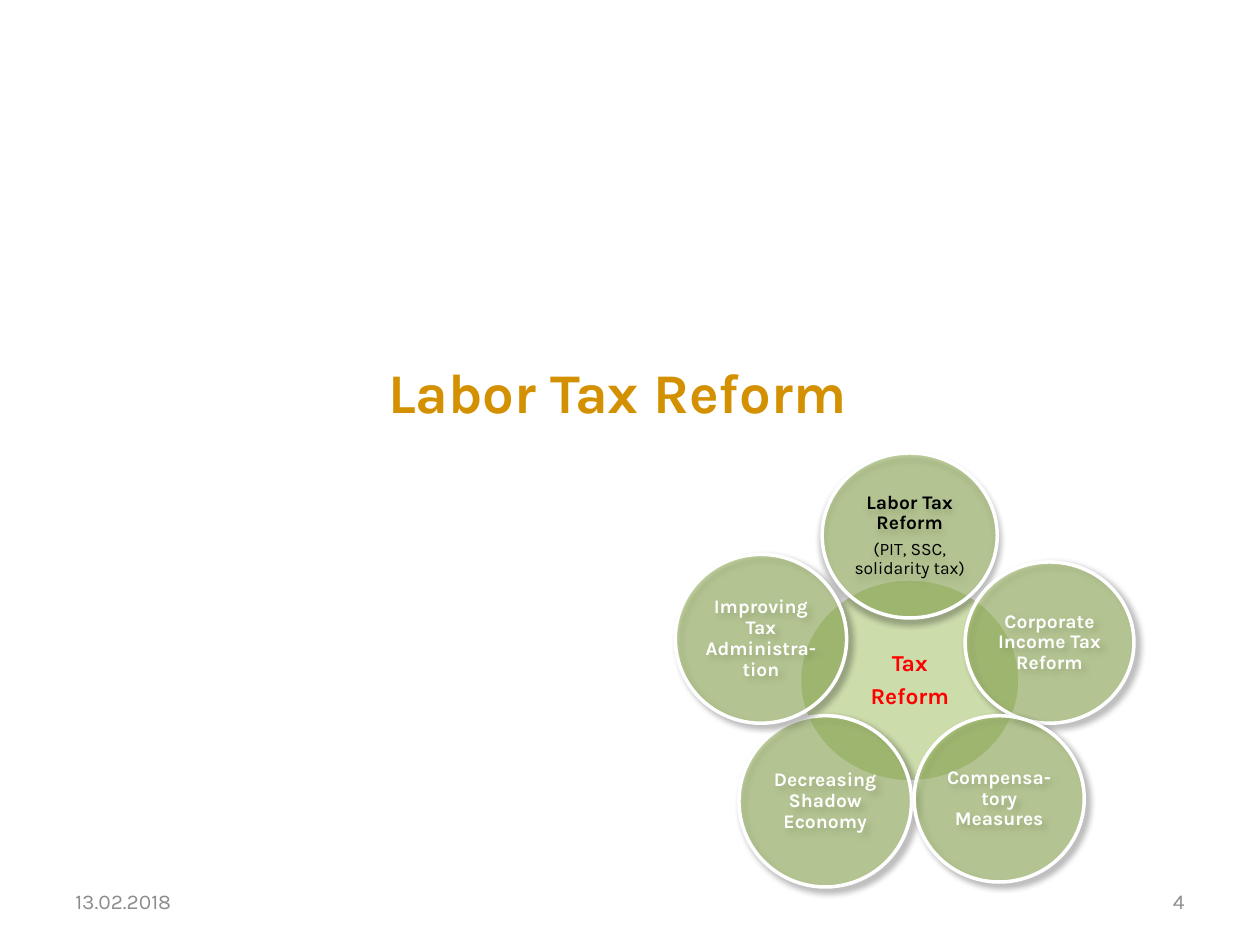
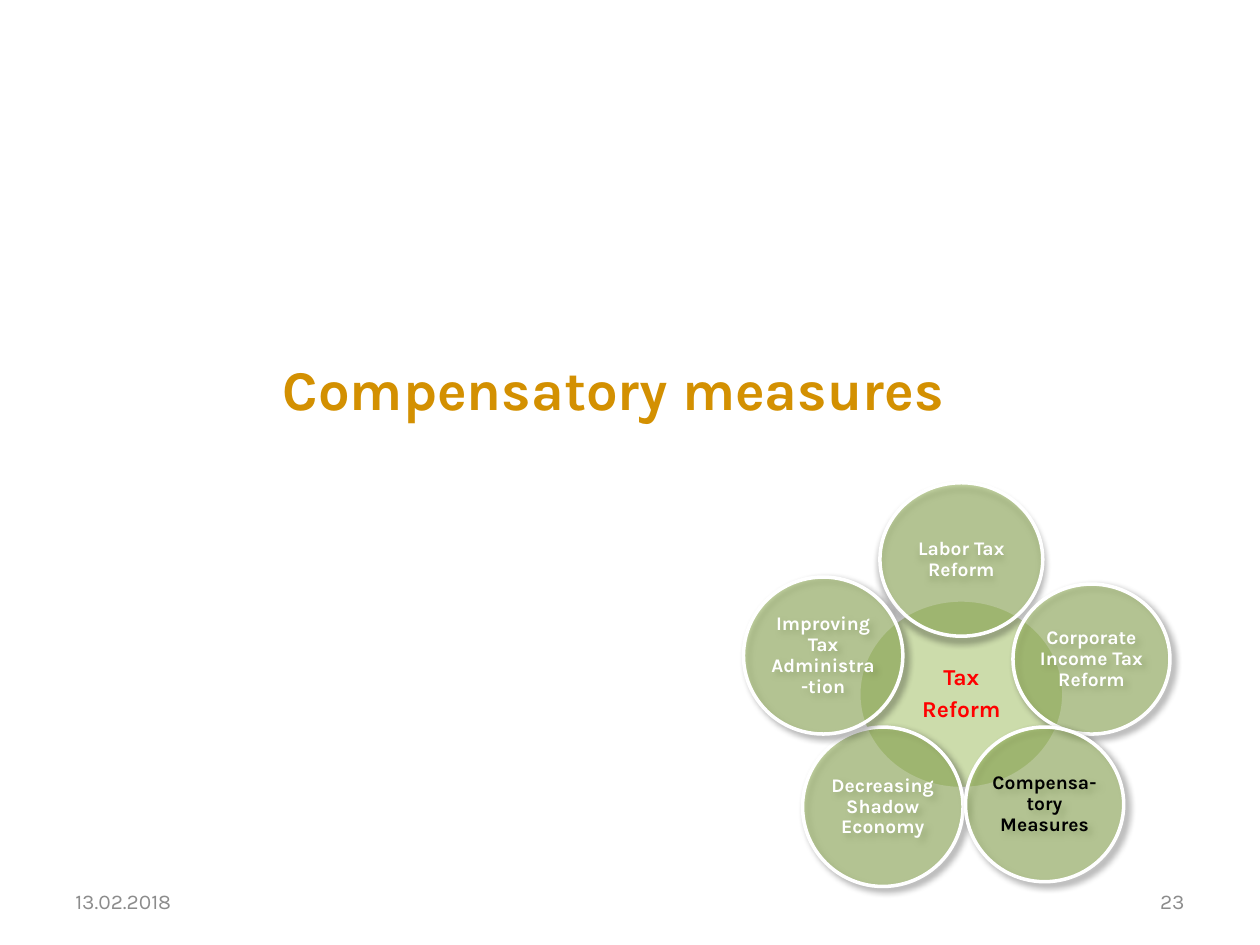
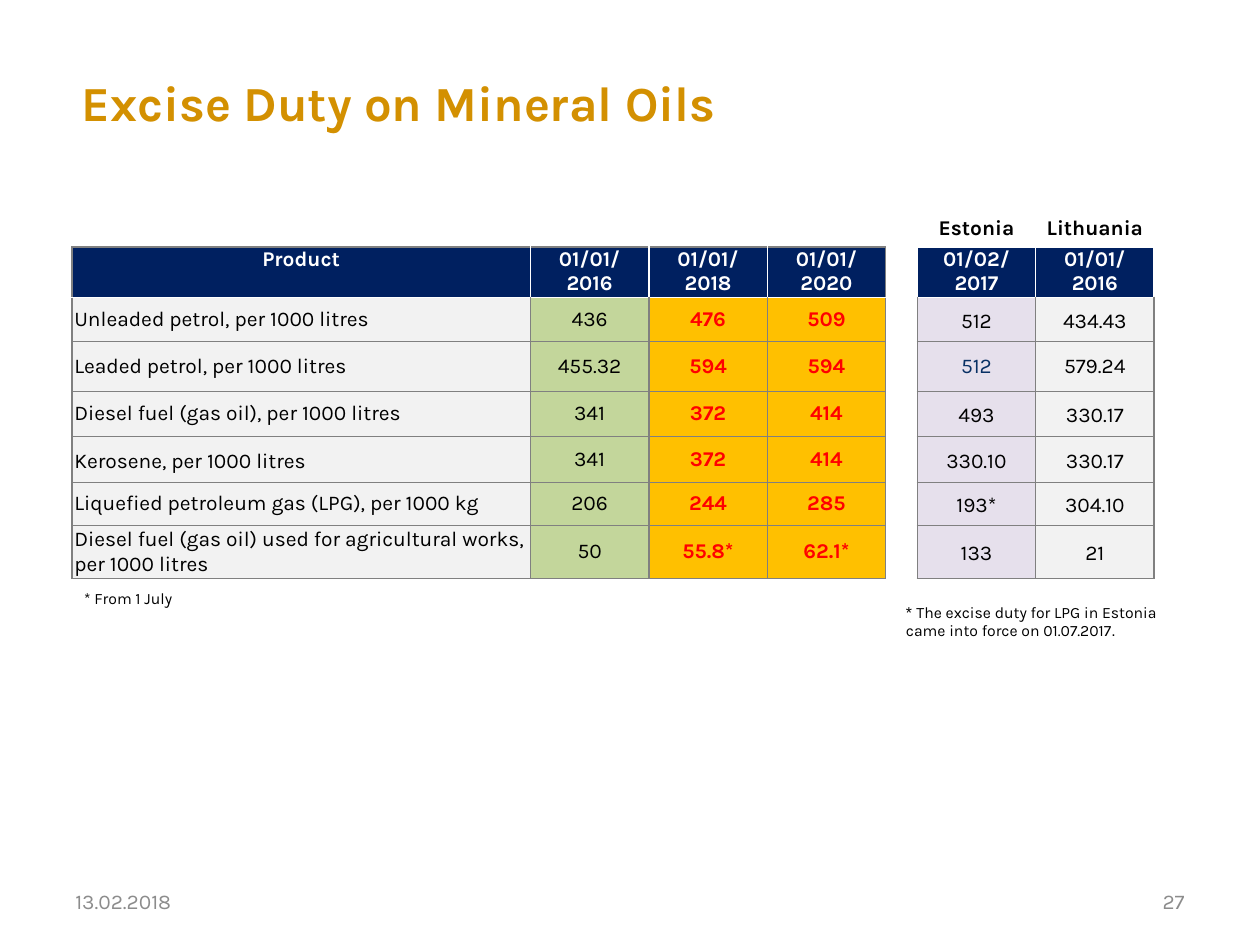
from dataclasses import dataclass

from lxml import etree
from pptx import Presentation
from pptx.dml.color import RGBColor
from pptx.enum.shapes import MSO_SHAPE
from pptx.enum.text import MSO_ANCHOR, MSO_AUTO_SIZE, PP_ALIGN
from pptx.oxml.ns import qn
from pptx.util import Inches, Pt

LEFT, CENTER, RIGHT = PP_ALIGN.LEFT, PP_ALIGN.CENTER, PP_ALIGN.RIGHT
TOP, MIDDLE = MSO_ANCHOR.TOP, MSO_ANCHOR.MIDDLE
OVAL = MSO_SHAPE.OVAL
GROW = MSO_AUTO_SIZE.SHAPE_TO_FIT_TEXT


@dataclass(frozen=True)
class Theme:
    font: str = "Karla"
    symbol_font: str = "Arial"
    gold: str = "D39001"
    footer: str = "8C8C8C"
    green: str = "9BBB59"
    pale_green: str = "C3D69B"
    navy: str = "002060"
    blue_ink: str = "083064"
    amber: str = "FFC000"
    lilac: str = "E6E0EC"
    pale_gray: str = "F2F2F2"
    gray: str = "808080"
    red: str = "FF0000"
    white: str = "FFFFFF"
    black: str = "000000"
    section_size: int = 32
    title_size: int = 28
    hub_size: int = 13
    body_size: int = 12
    petal_size: int = 11
    note_size: int = 10
    footnote_size: int = 9


@dataclass(frozen=True)
class Span:
    text: str
    size: int
    color: str
    bold: bool = False
    font: str = Theme.font


@dataclass(frozen=True)
class Cell:
    lines: tuple
    fill: str
    color: str = Theme.black
    bold: bool = False
    align: int = CENTER
    anchor: int = MIDDLE
    line_spacing: float = 1
    after: int = 0
    insets: tuple = (0.02, 0)


THEME = Theme()
DATE = "13.02.2018"

PETALS = [
    ("Labor Tax Reform", 0, -1.15, 1.39, 1.31, 90),
    ("Corporate Income Tax Reform", 1.11, -0.3, 1.34, 1.28, 45),
    ("Decreasing Shadow Economy", -0.67, 0.96, 1.37, 1.36, 45),
    ("Compensa-tory Measures", 0.71, 0.94, 1.35, 1.32, 45),
    ("Improving Tax Administra-tion", -1.18, -0.33, 1.36, 1.34, 45),
]

COLUMN = 0.94
HEAD_HEIGHT = 0.39
BODY_HEIGHTS = [0.35, 0.4, 0.35, 0.37, 0.34, 0.42]

DUTIES = [
    ("Unleaded petrol, per 1000 litres", "436", "476", "509"),
    ("Leaded petrol, per 1000 litres", "455.32", "594", "594"),
    ("Diesel fuel (gas oil), per 1000 litres", "341", "372", "414"),
    ("Kerosene, per 1000 litres", "341", "372", "414"),
    ("Liquefied petroleum gas (LPG), per 1000 kg", "206", "244", "285"),
    ("Diesel fuel (gas oil) used for agricultural works, per 1000 litres",
     "50", "55.8*", "62.1*"),
]
NEIGHBOURS = [
    ("512", "434.43"),
    ("512", "579.24"),
    ("493", "330.17"),
    ("330.10", "330.17"),
    ("193*", "304.10"),
    ("133", "21"),
]


class Slides:
    def __init__(self, theme):
        self.theme = theme
        self.deck = Presentation()
        self.deck.slide_width = Inches(10)
        self.deck.slide_height = Inches(7.5)
        self.page = None

    def new_page(self, number):
        self.page = self.deck.slides.add_slide(self.deck.slide_layouts[6])
        for text, left, align in ((DATE, 0.5, LEFT), (number, 7.17, RIGHT)):
            span = Span(text, self.theme.body_size, self.theme.footer)
            self.text(left, 6.95, 2.33, 0.4, [[span]], align)

    def add_paras(self, frame, paras, align=LEFT, line_spacing=None,
                  after=None):
        for index, spans in enumerate(paras):
            para = frame.add_paragraph() if index else frame.paragraphs[0]
            para.alignment = align
            if line_spacing:
                para.line_spacing = line_spacing
            if after is not None:
                para.space_after = Pt(after)
            for span in spans:
                run = para.add_run()
                run.text = span.text
                run.font.name = span.font
                run.font.size = Pt(span.size)
                run.font.bold = span.bold
                run.font.color.rgb = RGBColor.from_string(span.color)

    def inset(self, target, across, down):
        target.margin_left = target.margin_right = Inches(across)
        target.margin_top = target.margin_bottom = Inches(down)

    def text(self, left, top, width, height, paras, align=LEFT, anchor=MIDDLE):
        box = self.page.shapes.add_textbox(
            Inches(left), Inches(top), Inches(width), Inches(height))
        frame = box.text_frame
        frame.word_wrap = True
        frame.vertical_anchor = anchor
        self.add_paras(frame, paras, align)
        return frame

    def title(self, left, top, width, height, text, size, align=LEFT):
        span = Span(text, size, self.theme.gold, True)
        self.text(left, top, width, height, [[span]], align)

    def ellipse(self, x, y, width, height, paras, shadow_angle=None):
        shape = self.page.shapes.add_shape(
            OVAL, Inches(x - width / 2), Inches(y - height / 2),
            Inches(width), Inches(height))
        shape.fill.solid()
        shape.fill.fore_color.rgb = RGBColor.from_string(self.theme.green)
        shape.line.color.rgb = RGBColor.from_string(self.theme.white)
        shape.line.width = Pt(2)
        shape.shadow.inherit = False
        properties = shape._element.spPr
        color = properties.find(qn("a:solidFill")).find(qn("a:srgbClr"))
        etree.SubElement(color, qn("a:alpha"), val="50000")
        if shadow_angle is not None:
            shadow = etree.SubElement(
                properties.find(qn("a:effectLst")), qn("a:outerShdw"),
                blurRad=str(Pt(4)), dist=str(Pt(3)),
                dir=str(shadow_angle * 60000), rotWithShape="0")
            color = etree.SubElement(
                shadow, qn("a:srgbClr"), val=self.theme.black)
            etree.SubElement(color, qn("a:alpha"), val="40000")
        frame = shape.text_frame
        frame.word_wrap = True
        frame.vertical_anchor = MIDDLE
        self.inset(frame, 0.02, 0.02)
        self.add_paras(frame, paras, CENTER, 0.9, 0.35 * paras[0][0].size)

    def flower(self, x, y, scale, active, note=None):
        theme = self.theme
        hub = [[Span(word, theme.hub_size, theme.red, True)]
               for word in ("Tax", "Reform")]
        self.ellipse(x, y, 1.75 * scale, 1.61 * scale, hub)
        for label, dx, dy, width, height, angle in PETALS:
            chosen = label == active
            color = theme.black if chosen else theme.white
            paras = [[Span(label, theme.petal_size, color, True)]]
            if chosen and note:
                paras.append([Span(note, theme.note_size, color)])
            self.ellipse(x + dx * scale, y + dy * scale,
                         width * scale, height * scale, paras, angle)

    def border(self, cell, edges):
        properties = cell._tc.get_or_add_tcPr()
        for index, (side, (color, width)) in enumerate(zip("LRTB", edges)):
            line = etree.Element(qn("a:ln" + side), w=str(Pt(width)))
            fill = etree.SubElement(line, qn("a:solidFill"))
            etree.SubElement(fill, qn("a:srgbClr"), val=color)
            properties.insert(index, line)

    def edges(self, row, column, last_row, last_column, heads, frame_color):
        white, gray = (self.theme.white, 1), (self.theme.gray, 1)
        thin, frame = (self.theme.gray, 0.5), (frame_color, 1)
        if row < heads:
            return (white if column else frame,
                    frame if column == last_column else white,
                    white if row else frame,
                    white)
        return (gray, gray,
                white if row == heads else thin,
                gray if row == last_row else thin)

    def table(self, left, top, widths, heights, rows, heads, frame_color):
        table = self.page.shapes.add_table(
            len(rows), len(widths), Inches(left), Inches(top),
            Inches(sum(widths)), Inches(sum(heights))).table
        table.first_row = table.horz_banding = False
        for column, width in zip(table.columns, widths):
            column.width = Inches(width)
        for row, height in zip(table.rows, heights):
            row.height = Inches(height)
        for row, cells in enumerate(rows):
            for column, content in enumerate(cells):
                cell = table.cell(row, column)
                cell.fill.solid()
                cell.fill.fore_color.rgb = RGBColor.from_string(content.fill)
                cell.vertical_anchor = content.anchor
                self.inset(cell, *content.insets)
                paras = [[Span(line, self.theme.body_size, content.color,
                               content.bold)] for line in content.lines]
                self.add_paras(cell.text_frame, paras, content.align,
                               content.line_spacing, content.after)
                self.border(cell, self.edges(
                    row, column, len(rows) - 1, len(widths) - 1,
                    heads, frame_color))


def head_cell(*lines):
    return Cell(lines, THEME.navy, THEME.white, True, anchor=TOP)


def duty_rows():
    rows = [[head_cell("Product")]
            + [head_cell("01/01/", year) for year in ("2016", "2018", "2020")]]
    for product, current, *planned in DUTIES:
        spacing = 1.15 if product.startswith("Kerosene") else 1
        rows.append([
            Cell((product,), THEME.pale_gray, align=LEFT, line_spacing=spacing),
            Cell((current,), THEME.pale_green),
            *[Cell((value,), THEME.amber, THEME.red, True)
              for value in planned]])
    return rows


def neighbour_rows():
    rows = [
        [Cell((country,), THEME.white, bold=True)
         for country in ("Estonia", "Lithuania")],
        [head_cell("01/02/", "2017"), head_cell("01/01/", "2016")],
    ]
    for index, values in enumerate(NEIGHBOURS):
        leaded = index == 1
        layout = {} if leaded else {
            "line_spacing": 1.15, "after": 10, "insets": (0.06, 0)}
        inks = (THEME.blue_ink if leaded else THEME.black, THEME.black)
        fills = (THEME.lilac, THEME.pale_gray)
        rows.append([Cell((value,), fill, ink, **layout)
                     for value, fill, ink in zip(values, fills, inks)])
    return rows


def main():
    slides = Slides(THEME)

    slides.new_page("4")
    slides.title(1.67, 2.87, 6.46, 0.47, "Labor Tax Reform",
                 THEME.section_size, CENTER)
    slides.flower(7.22, 5.4, 1, "Labor Tax Reform",
                  "(PIT, SSC, solidarity tax)")

    slides.new_page("23")
    slides.title(1.64, 2.57, 6.46, 1.02, "Compensatory measures",
                 THEME.section_size, CENTER)
    slides.flower(7.63, 5.51, 0.93, "Compensa-tory Measures")

    slides.new_page("27")
    slides.title(0.55, 0.53, 5.95, 0.55, "Excise Duty on Mineral Oils",
                 THEME.title_size)
    slides.table(0.57, 1.96, [3.64] + [COLUMN] * 3,
                 [HEAD_HEIGHT] + BODY_HEIGHTS, duty_rows(), 1, THEME.gray)
    slides.table(7.28, 1.67, [COLUMN] * 2,
                 [0.29, HEAD_HEIGHT] + BODY_HEIGHTS, neighbour_rows(), 2,
                 THEME.white)
    size, ink = THEME.footnote_size, THEME.black
    frame = slides.text(0.57, 4.62, 0.95, 0.25,
                        [[Span("* From 1 July", size, ink)]], anchor=TOP)
    frame.word_wrap = False
    frame.auto_size = GROW
    frame = slides.text(7.12, 4.74, 2.21, 0.38, [[
        Span("* ", size, ink, font=THEME.symbol_font),
        Span("The excise duty for LPG in Estonia came into force on 01.07.2017",
             size, ink),
        Span(".", size, ink, font=THEME.symbol_font)]])
    slides.inset(frame, 0.07, 0.04)
    frame.auto_size = GROW

    slides.deck.save("out.pptx")


if __name__ == "__main__":
    main()
